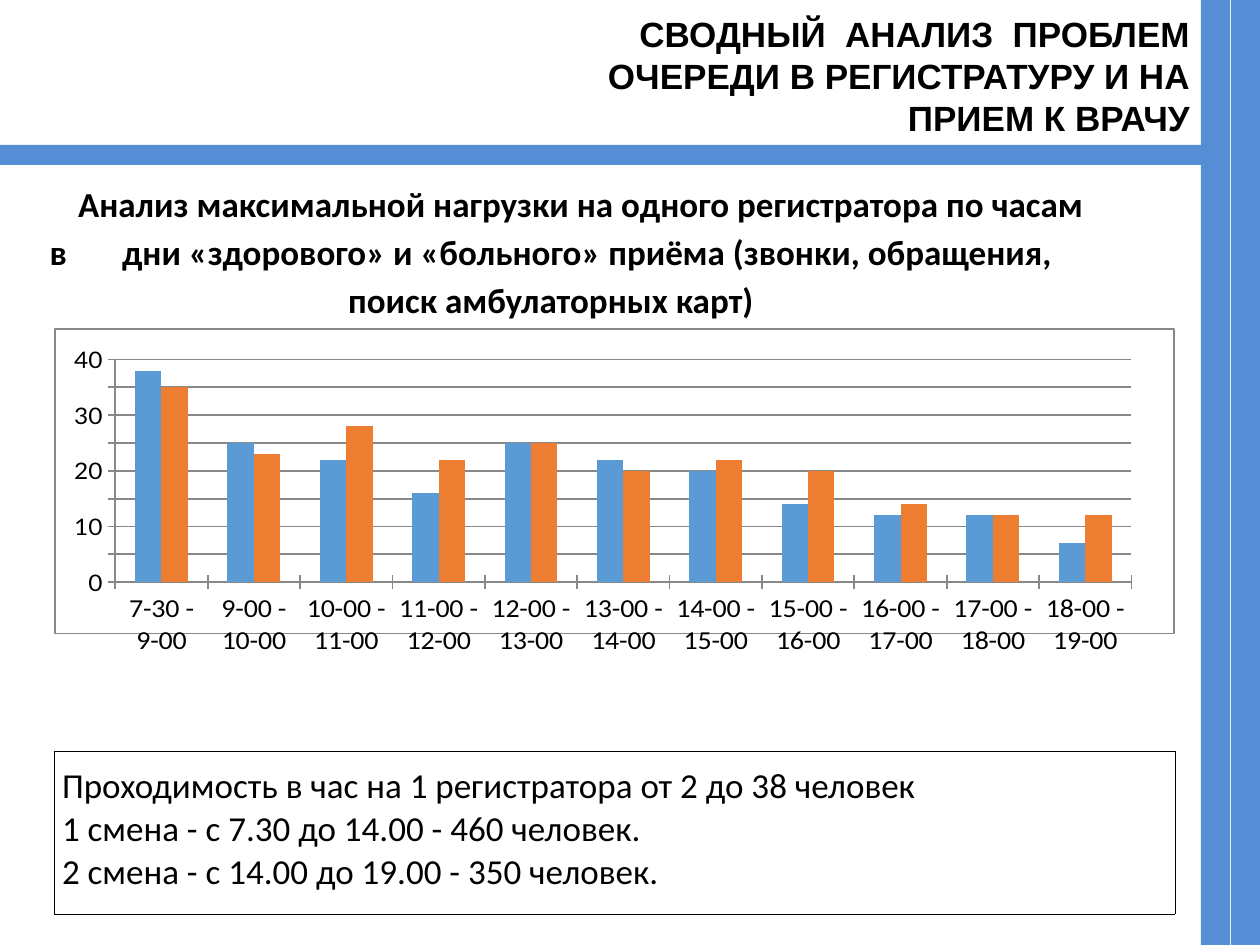
from pptx import Presentation
from pptx.chart.data import CategoryChartData
from pptx.dml.color import RGBColor
from pptx.enum.chart import XL_CHART_TYPE, XL_TICK_LABEL_POSITION, XL_TICK_MARK
from pptx.enum.shapes import MSO_SHAPE
from pptx.enum.text import MSO_ANCHOR, PP_ALIGN
from pptx.oxml import parse_xml
from pptx.oxml.ns import nsdecls, qn
from pptx.util import Pt

COLUMNS = XL_CHART_TYPE.COLUMN_CLUSTERED
LOW, CROSS = XL_TICK_LABEL_POSITION.LOW, XL_TICK_MARK.CROSS
RECTANGLE, TOP = MSO_SHAPE.RECTANGLE, MSO_ANCHOR.TOP
CENTER, RIGHT = PP_ALIGN.CENTER, PP_ALIGN.RIGHT

PX = 914400 // 126
BLACK, WHITE, BLUE, GREY = "000000", "FFFFFF", "558ED5", "888888"

TITLE = ["СВОДНЫЙ  АНАЛИЗ  ПРОБЛЕМ", "ОЧЕРЕДИ В РЕГИСТРАТУРУ И НА ПРИЕМ К ВРАЧУ"]
SUBTITLE_START = "Анализ максимальной нагрузки на одного регистратора по часам в"
SUBTITLE_END = "дни «здорового» и «больного» приёма (звонки, обращения, поиск амбулаторных карт)"
HOURS = ["7-30 - 9-00"] + [f"{h}-00 - {h + 1}-00" for h in range(9, 19)]
LOADS = [
    ("Series 1", "5B9BD5", [38, 25, 22, 16, 25, 22, 20, 14, 12, 12, 7]),
    ("Series 2", "ED7D31", [35, 23, 28, 22, 25, 20, 22, 20, 14, 12, 12]),
]
SUMMARY = [
    "Проходимость в час на 1 регистратора от 2 до 38 человек",
    "1 смена - с 7.30 до 14.00 - 460 человек.",
    "2 смена - с 14.00 до 19.00 - 350 человек.",
]
STRIPES = [(1231, 0, 29, 945), (1201, 0, 29, 945), (0, 145, 1201, 20)]
TITLE_BOX = (546, 6, 650, 133)
SUBTITLE_BOX = (3, 170, 1096, 244)
CHART_BOX = (54, 328, 1121, 329)
SUMMARY_BOX = (54, 751, 1121, 163)
PLOT = {"x": 0.054, "y": 0.101, "w": 0.908, "h": 0.731}


def color(value):
    return RGBColor.from_string(value)


def emu(box):
    return [length * PX for length in box]


def set_font(font, size, name="Calibri", bold=False):
    for key, value in {"size": Pt(size), "name": name, "bold": bold}.items():
        setattr(font, key, value)
    font.color.rgb = color(BLACK)


def set_margins(area, px):
    for side in ("left", "top", "right", "bottom"):
        setattr(area, f"margin_{side}", px * PX)


def write_lines(frame, lines, align=None, **font):
    frame.text = "\n".join(lines)
    for paragraph in frame.paragraphs:
        paragraph.alignment = align
        set_font(paragraph.font, **font)


def area_format(border=None):
    """Chart area properties: white fill and an optional one-point border."""
    line = f'<a:solidFill><a:srgbClr val="{border}"/></a:solidFill>' if border else "<a:noFill/>"
    return parse_xml(
        f'<c:spPr {nsdecls("c", "a")}><a:solidFill><a:srgbClr val="{WHITE}"/></a:solidFill>'
        f'<a:ln w="12700">{line}</a:ln></c:spPr>')


def place_plot(plot_area):
    for layout in plot_area.findall(qn("c:layout")):
        plot_area.remove(layout)
    modes = "".join(f'<c:{axis}Mode val="edge"/>' for axis in "xy")
    sizes = "".join(f'<c:{key} val="{value}"/>' for key, value in PLOT.items())
    plot_area.insert(0, parse_xml(
        f'<c:layout {nsdecls("c")}><c:manualLayout><c:layoutTarget val="inner"/>'
        f"{modes}{sizes}</c:manualLayout></c:layout>"))


def add_title(slide):
    title = slide.shapes.title
    title.left, title.top, title.width, title.height = emu(TITLE_BOX)
    frame = title.text_frame
    frame.vertical_anchor, frame.word_wrap = TOP, True
    set_margins(frame, 6)
    write_lines(frame, TITLE, RIGHT, size=20, name="Arial", bold=True)


def add_stripes(slide):
    for box in STRIPES:
        stripe = slide.shapes.add_shape(RECTANGLE, *emu(box))
        stripe.shadow.inherit = False
        stripe.fill.solid()
        stripe.fill.fore_color.rgb = color(BLUE)
        stripe.line.fill.background()


def add_subtitle(slide):
    frame = slide.shapes.add_textbox(*emu(SUBTITLE_BOX)).text_frame
    frame.word_wrap = True
    set_margins(frame, 6)
    paragraph = frame.paragraphs[0]
    paragraph.alignment, paragraph.line_spacing = CENTER, 1.15
    paragraph._p.get_or_add_pPr().set("indent", str(60 * PX))
    for text in (SUBTITLE_START, " ", SUBTITLE_END):
        run = paragraph.add_run()
        run.text = text
        set_font(run.font, 20, bold=True)
        if text == " ":
            run.font._element.set("spc", "2700")  # one wide gap


def add_load_chart(slide):
    data = CategoryChartData()
    data.categories = HOURS
    for name, _, values in LOADS:
        data.add_series(name, values)
    chart = slide.shapes.add_chart(COLUMNS, *emu(CHART_BOX), data).chart
    chart.has_legend = chart.has_title = False
    set_font(chart.font, 10)

    plot = chart.plots[0]
    plot.vary_by_categories, plot.gap_width, plot.overlap = False, 150, 0
    for series, (_, fill, _) in zip(plot.series, LOADS):
        series.format.fill.solid()
        series.format.fill.fore_color.rgb = color(fill)

    hours, load = chart.category_axis, chart.value_axis
    for axis, size, font in ((hours, 16, "Calibri"), (load, 14, "Lato")):
        axis.major_tick_mark = CROSS
        set_font(axis.tick_labels.font, size, font)
    hours.tick_label_position = LOW
    load.minimum_scale, load.maximum_scale, load.major_unit = 0, 40, 5
    load.tick_labels.number_format = "0"
    load.tick_labels.number_format_is_linked = False
    for part in (hours, load, load.major_gridlines):
        part.format.line.color.rgb = color(GREY)
        part.format.line.width = Pt(1)

    chart_xml = chart._chartSpace.find(qn("c:chart"))
    plot_area = chart_xml.find(qn("c:plotArea"))
    place_plot(plot_area)
    plot_area.append(area_format())
    chart_xml.addnext(area_format(GREY))


def add_summary(slide):
    table = slide.shapes.add_table(1, 1, *emu(SUMMARY_BOX)).table
    table.first_row = table.horz_banding = False
    cell = table.cell(0, 0)
    set_margins(cell, 8)
    write_lines(cell.text_frame, SUMMARY, size=20)
    cell.text_frame.paragraphs[0].line_spacing = 1.15
    cell.fill.background()
    for index, side in enumerate("LRTB"):
        cell._tc.get_or_add_tcPr().insert(index, parse_xml(
            f'<a:ln{side} {nsdecls("a")} w="6350"><a:solidFill>'
            f'<a:srgbClr val="{BLACK}"/></a:solidFill></a:ln{side}>'))


def main():
    deck = Presentation()
    deck.slide_width, deck.slide_height = emu((1260, 945))
    slide = deck.slides.add_slide(deck.slide_layouts[5])
    for add_part in (add_title, add_stripes, add_load_chart, add_subtitle, add_summary):
        add_part(slide)
    deck.save("out.pptx")


if __name__ == "__main__":
    main()
